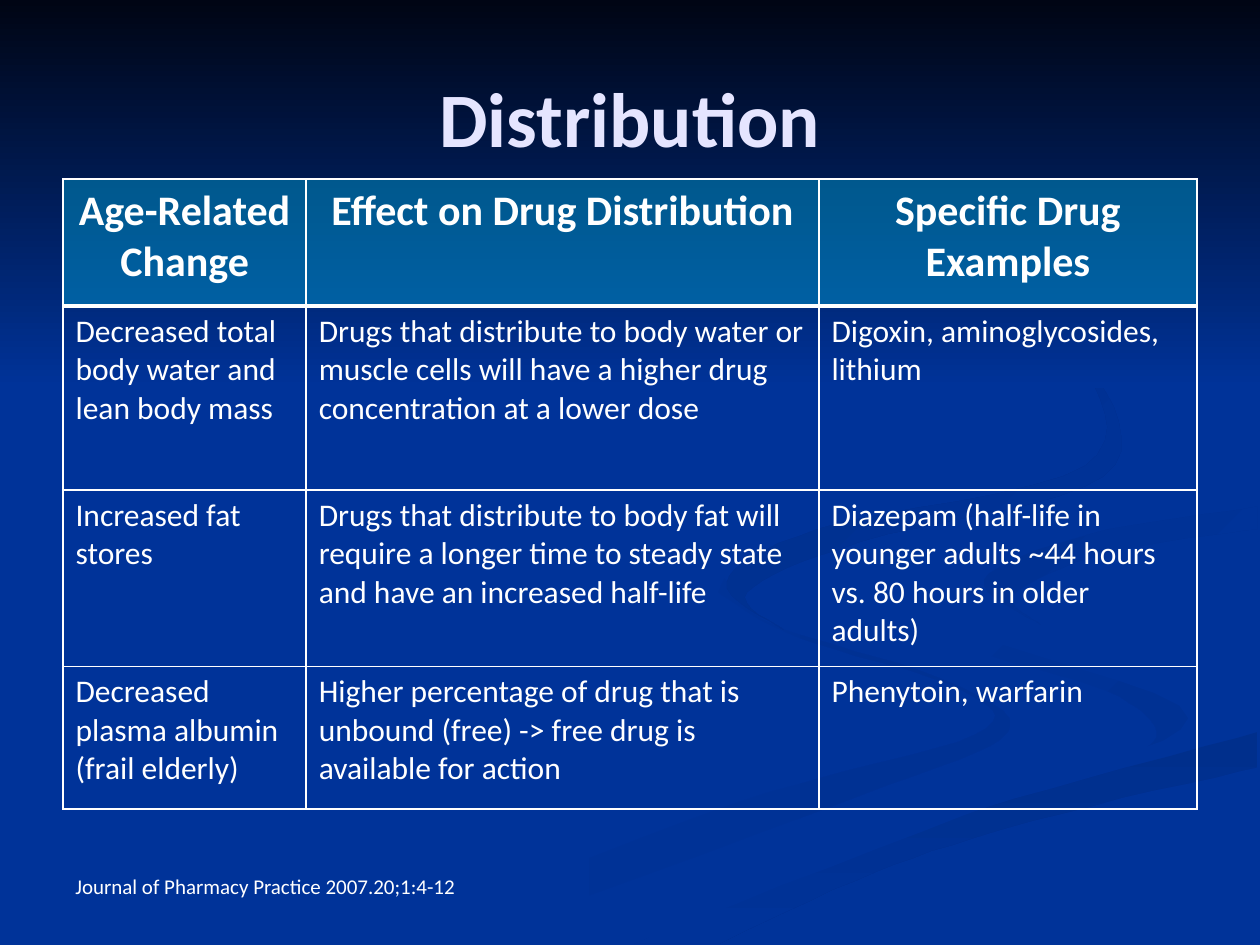
from lxml import etree
from pptx import Presentation
from pptx.dml.color import RGBColor
from pptx.enum import text
from pptx.oxml import ns
from pptx.util import Inches, Pt

FONT = "Calibri"
WHITE = RGBColor(0xFF, 0xFF, 0xFF)
LAVENDER = RGBColor(0xE5, 0xE5, 0xFF)
BLUE = RGBColor(0x00, 0x33, 0x99)
SHADE = RGBColor(0x00, 0x31, 0x93)
DEEP_SHADE = RGBColor(0x00, 0x2F, 0x8C)
NIGHT = RGBColor(0x00, 0x05, 0x14)
HEADER_TEAL = RGBColor(0x00, 0x99, 0xCC)
HEADER_OPACITY = 49

TITLE = "Distribution"
CITATION = "Journal of Pharmacy Practice 2007.20;1:4-12"
HEADERS = ["Age-Related Change", "Effect on Drug Distribution", "Specific Drug Examples"]
CHANGES = [
    ("Decreased total body water and lean body mass",
     "Drugs that distribute to body water or muscle cells will have a higher drug "
     "concentration at a lower dose",
     "Digoxin, aminoglycosides, lithium"),
    ("Increased fat stores",
     "Drugs that distribute to body fat will require a longer time to steady state "
     "and have an increased half-life",
     "Diazepam (half-life in younger adults ~44 hours vs. 80 hours in older adults)"),
    ("Decreased plasma albumin (frail elderly)",
     "Higher percentage of drug that is unbound (free) -> free drug is available for action",
     "Phenytoin, warfarin"),
]
COLUMN_WIDTHS = [1.93, 4.07, 3]
ROW_HEIGHTS = [1.01, 1.46, 1.4, 1.13]

# Background ribbons, back to front: start colour, end colour, clockwise angle,
# and the two long edges in inches, both running the same way.
RIBBONS = [
    (BLUE, SHADE, 0,
     [(5.75, 4.59), (6.14, 4.96), (7.45, 5.38), (8, 5.81), (6.76, 6.34), (3.61, 7.49)],
     [(5.7, 4.7), (6.31, 5.05), (7.62, 5.47), (7.74, 5.83), (5.79, 6.39), (3, 7.49)]),
    (BLUE, SHADE, 45,
     [(7.24, 4.64), (7.58, 4.98), (8.88, 5.35), (9.43, 5.7), (8.94, 6.05)],
     [(7.24, 4.66), (7.66, 5.12), (8.8, 5.49), (9.18, 5.81), (8.94, 6.05)]),
    (DEEP_SHADE, BLUE, 90,
     [(5.03, 7.49), (6.3, 6.93), (7.8, 6.42), (9.98, 5.81)],
     [(5.71, 7.49), (6.95, 6.92), (8.21, 6.51), (9.98, 6.09)]),
    (BLUE, BLUE, 0,
     [(9.99, 3.87), (7.88, 4.22), (7.45, 4.9), (9.43, 5.7), (7.43, 6.43), (4.77, 7.49)],
     [(9.99, 4.02), (8.11, 4.37), (8.04, 4.85), (9.99, 5.6), (7.65, 6.47), (5.03, 7.49)]),
    (SHADE, BLUE, 45,
     [(9.98, 4.02), (8.65, 4.24), (7.81, 4.6), (8.26, 4.96)],
     [(9.98, 4.2), (8.78, 4.39), (8.05, 4.72), (8.26, 4.96)]),
    (DEEP_SHADE, BLUE, 45,
     [(7.62, 2.33), (8.64, 2.91), (8.76, 3.78), (6.83, 4.3), (5.93, 4.7), (6.22, 5)],
     [(7.62, 2.33), (8.55, 2.85), (8.61, 3.7), (6.49, 4.2), (5.77, 4.62), (6.22, 5)]),
    (NIGHT, BLUE, 90, [(0, 0), (10, 0)], [(0, 3.08), (10, 3.08)]),
]


def smooth(edge, steps=8):
    """Run a Catmull-Rom curve through the points of an open edge."""
    padded = [edge[0], *edge, edge[-1]]
    curve = []
    for before, start, end, after in zip(padded, padded[1:], padded[2:], padded[3:]):
        for step in range(steps):
            t = step / steps
            curve.append(tuple(
                b + t / 2 * (c - a + t * (2 * a - 5 * b + 4 * c - d
                                          + t * (3 * b - a - 3 * c + d)))
                for a, b, c, d in zip(before, start, end, after)))
    return curve + [edge[-1]]


def add_ribbon(slide, start, end, angle, outer, inner):
    outline = [(round(x * 100), round(y * 100))
               for x, y in smooth(outer) + smooth(inner)[::-1]]
    builder = slide.shapes.build_freeform(*outline[0], scale=Inches(0.01))
    builder.add_line_segments(outline[1:], close=True)
    ribbon = builder.convert_to_shape()
    ribbon.shadow.inherit = False
    ribbon.line.fill.background()
    ribbon.fill.gradient()
    ribbon.fill.gradient_angle = (360 - angle) % 360
    for stop, color, position in zip(ribbon.fill.gradient_stops, (start, end), (0, 1)):
        stop.color.rgb = color
        stop.position = position


def format_text(paragraph, size, color=WHITE, bold=False, align=text.PP_ALIGN.LEFT):
    paragraph.alignment = align
    font = paragraph.font
    font.name, font.size, font.bold = FONT, Pt(size), bold
    font.color.rgb = color


def add_borders(cell, bottom_width):
    properties = cell._tc.get_or_add_tcPr()
    for side, width in (("L", 1), ("R", 1), ("T", 1), ("B", bottom_width)):
        line = etree.SubElement(properties, ns.qn(f"a:ln{side}"), w=str(Pt(width)))
        fill = etree.SubElement(line, ns.qn("a:solidFill"))
        etree.SubElement(fill, ns.qn("a:srgbClr"), val=str(WHITE))


def fill_header(cell):
    cell.fill.solid()
    cell.fill.fore_color.rgb = HEADER_TEAL
    color = cell._tc.tcPr.find(ns.qn("a:solidFill")).find(ns.qn("a:srgbClr"))
    etree.SubElement(color, ns.qn("a:alpha"), val=str(HEADER_OPACITY * 1000))


def add_drug_table(slide):
    rows = [HEADERS, *CHANGES]
    frame = slide.shapes.add_table(len(rows), len(HEADERS), Inches(0.5), Inches(1.42),
                                   Inches(sum(COLUMN_WIDTHS)), Inches(sum(ROW_HEIGHTS)))
    table = frame.table
    table.horz_banding = False
    for column, width in zip(table.columns, COLUMN_WIDTHS):
        column.width = Inches(width)
    for r, (row, height) in enumerate(zip(rows, ROW_HEIGHTS)):
        table.rows[r].height = Inches(height)
        for c, wording in enumerate(row):
            cell = table.cell(r, c)
            cell.text = wording
            paragraph = cell.text_frame.paragraphs[0]
            add_borders(cell, 3 if r == 0 else 1)
            if r == 0:
                fill_header(cell)
                format_text(paragraph, 24, bold=True, align=text.PP_ALIGN.CENTER)
            else:
                cell.fill.background()
                format_text(paragraph, 18)


def main():
    deck = Presentation()
    deck.slide_width, deck.slide_height = Inches(10), Inches(7.5)
    slide = deck.slides.add_slide(deck.slide_layouts[5])
    slide.background.fill.solid()
    slide.background.fill.fore_color.rgb = BLUE

    for ribbon in RIBBONS:
        add_ribbon(slide, *ribbon)

    title = slide.shapes.title
    title.element.getparent().append(title.element)  # bring in front of the ribbons
    title.left, title.top, title.width, title.height = map(Inches, (0.5, 0.3, 9, 1.25))
    title.text_frame.text = TITLE
    title.text_frame.vertical_anchor = text.MSO_ANCHOR.MIDDLE
    format_text(title.text_frame.paragraphs[0], 44, LAVENDER, True, text.PP_ALIGN.CENTER)

    add_drug_table(slide)

    citation = slide.shapes.add_textbox(*map(Inches, (0.5, 6.88, 5.83, 0.3))).text_frame
    citation.word_wrap = True
    citation.text = CITATION
    format_text(citation.paragraphs[0], 12)

    deck.save("out.pptx")


if __name__ == "__main__":
    main()
